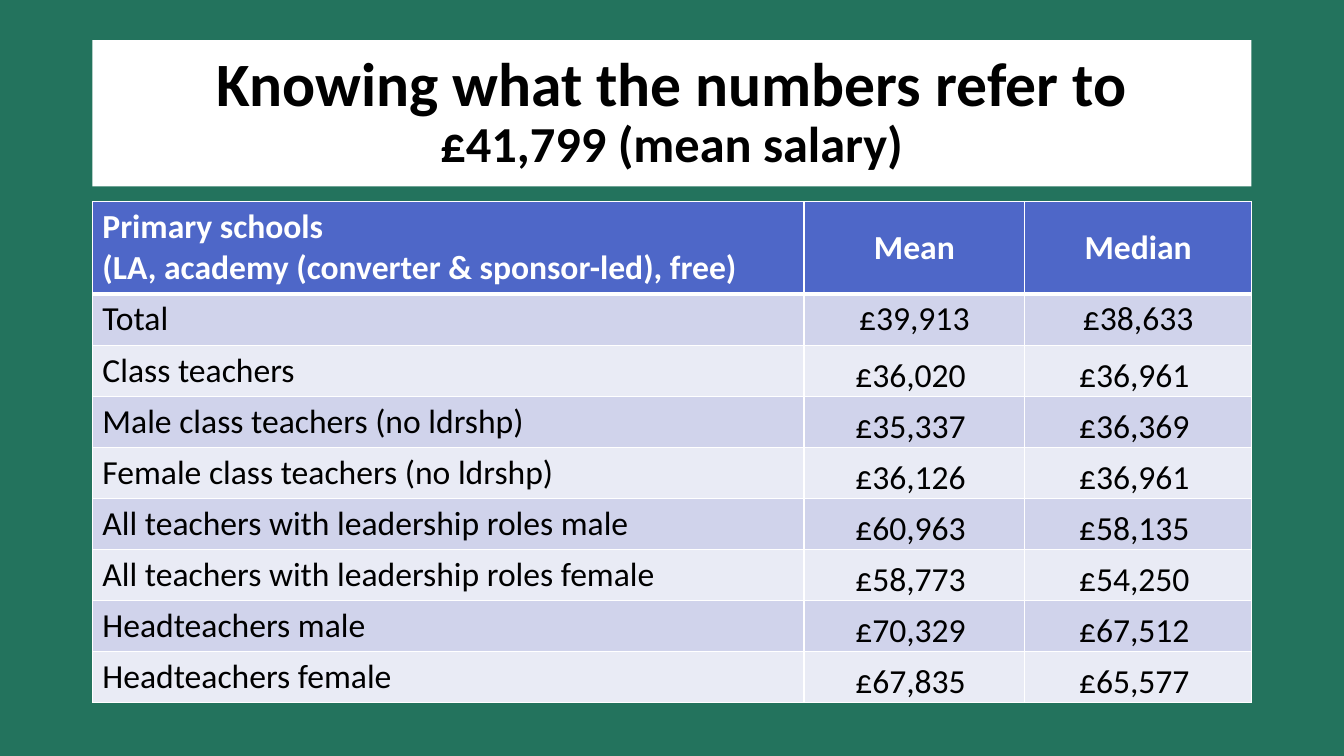
from dataclasses import dataclass
from lxml.etree import SubElement
from pptx import Presentation
from pptx.dml.color import RGBColor
from pptx.enum.shapes import MSO_SHAPE
from pptx.enum.text import MSO_ANCHOR, PP_ALIGN
from pptx.oxml.ns import qn
from pptx.util import Pt


@dataclass(frozen=True)
class Theme:
    font: str = "Calibri"
    back: str = "23735D"
    white: str = "FFFFFF"
    black: str = "000000"
    head: str = "4E67C8"
    bands: tuple = ("D0D3EB", "E9EBF5")
    title: int = 44
    sub: int = 36
    body: int = 24


THEME = Theme()
HEADS = ["Primary schools\n(LA, academy (converter & sponsor-led), free)", "Mean", "Median"]
ROWS = [
    ("Total", "£39,913", "£38,633"),
    ("Class teachers", "£36,020 ", "£36,961 "),
    ("Male class teachers (no ldrshp)", "£35,337 ", "£36,369 "),
    ("Female class teachers (no ldrshp)", "£36,126 ", "£36,961 "),
    ("All teachers with leadership roles male", "£60,963 ", "£58,135 "),
    ("All teachers with leadership roles female", "£58,773 ", "£54,250 "),
    ("Headteachers male", "£70,329 ", "£67,512 "),
    ("Headteachers female", "£67,835 ", "£65,577 "),
]


def paint(fill, color):
    fill.solid()
    fill.fore_color.rgb = RGBColor.from_string(color)


def write(para, text, size=THEME.body, color=THEME.black, bold=False, align=PP_ALIGN.LEFT):
    """Add one formatted run to a paragraph."""
    para.alignment = align
    run = para.add_run()
    run.text = text
    font = run.font
    font.name, font.size, font.bold = THEME.font, Pt(size), bold
    font.color.rgb = RGBColor.from_string(color)


def edge(cell, top=1, bottom=1):
    """Draw white borders; call before the cell is filled."""
    props = cell._tc.get_or_add_tcPr()
    for side, width in (("L", 1), ("R", 1), ("T", top), ("B", bottom)):
        line = SubElement(props, qn(f"a:ln{side}"), w=str(Pt(width)))
        solid = SubElement(line, qn("a:solidFill"))
        SubElement(solid, qn("a:srgbClr"), val=THEME.white)


def banner(slide, left, top, width, height):
    box = slide.shapes.add_shape(
        MSO_SHAPE.RECTANGLE, Pt(left), Pt(top), Pt(width), Pt(height))
    box.shadow.inherit = False
    paint(box.fill, THEME.white)
    box.line.fill.background()
    frame = box.text_frame
    frame.word_wrap = True
    frame.vertical_anchor = MSO_ANCHOR.MIDDLE
    para = frame.paragraphs[0]
    para.line_spacing = 0.9
    look = dict(bold=True, align=PP_ALIGN.CENTER)
    write(para, "Knowing what the numbers refer to", size=THEME.title, **look)
    para.add_line_break()
    write(para, "£41,799 (mean salary)", size=THEME.sub, **look)


def salaries(slide, left, top, width, height):
    data = [HEADS, *ROWS]
    table = slide.shapes.add_table(
        len(data), len(HEADS), Pt(left), Pt(top), Pt(width), Pt(height)).table
    # Column and row sizes
    mean, median, head = 157.7, 162, 66
    for col, size in zip(table.columns, (width - mean - median, mean, median)):
        col.width = Pt(size)
    for i, row in enumerate(table.rows):
        row.height = Pt((height - head) / len(ROWS) if i else head)
    # Cells
    for i, texts in enumerate(data):
        for j, text in enumerate(texts):
            cell = table.cell(i, j)
            edge(cell, top=3 if i == 1 else 1, bottom=1 if i else 3)
            paint(cell.fill, THEME.bands[(i - 1) % 2] if i else THEME.head)
            if j and i == 0:
                cell.vertical_anchor = MSO_ANCHOR.MIDDLE
            elif j and i > 1:
                cell.vertical_anchor = MSO_ANCHOR.BOTTOM
                cell.margin_left = cell.margin_right = cell.margin_top = Pt(0.75)
                cell.margin_bottom = Pt(0)
            frame = cell.text_frame
            for n, line in enumerate(text.split("\n")):
                para = frame.add_paragraph() if n else frame.paragraphs[0]
                write(para, line, bold=i == 0,
                      color=THEME.black if i else THEME.white,
                      align=PP_ALIGN.CENTER if j else PP_ALIGN.LEFT)


def main():
    deck = Presentation()
    deck.slide_width, deck.slide_height = Pt(960), Pt(540)
    slide = deck.slides.add_slide(deck.slide_layouts[6])
    paint(slide.background.fill, THEME.back)
    banner(slide, 66, 28.75, 828, 104.4)
    salaries(slide, 66, 144, 828, 358)
    deck.save("out.pptx")


if __name__ == "__main__":
    main()
